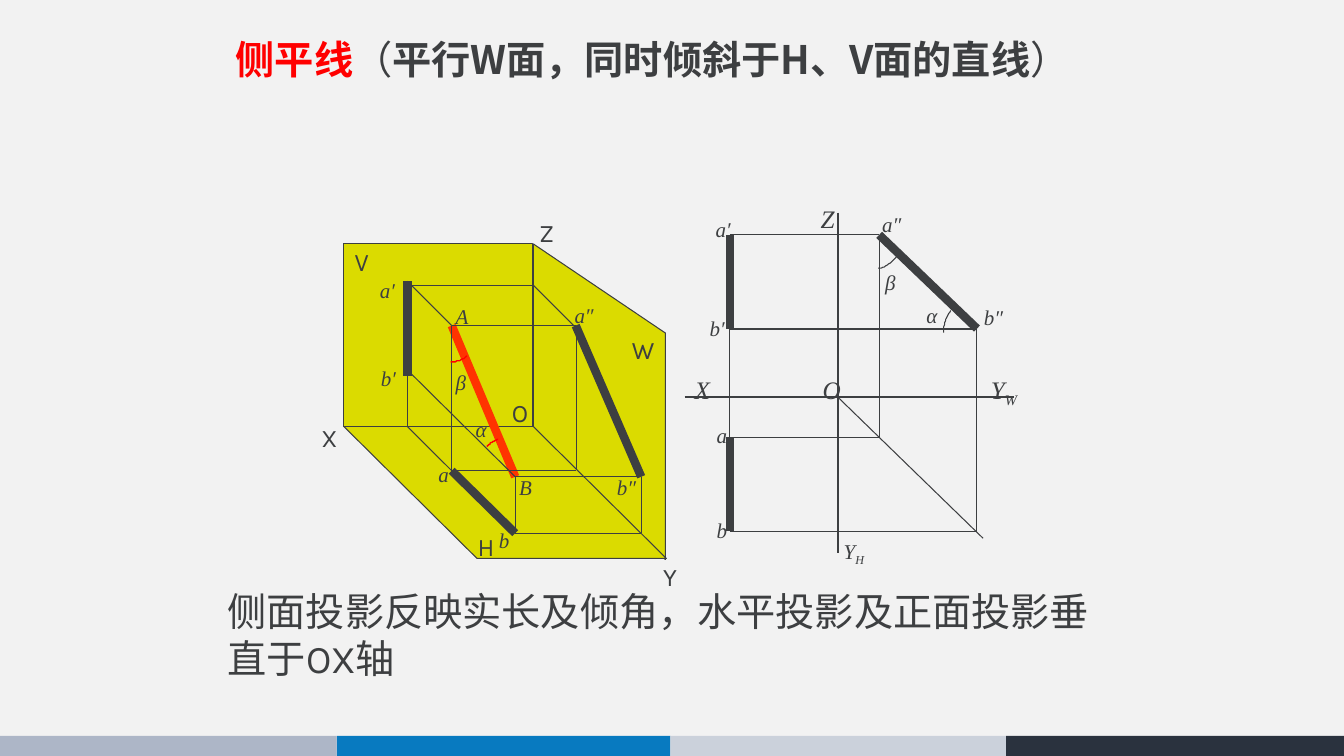
from lxml import etree
from pptx import Presentation
from pptx import util as u
from pptx.dml.color import RGBColor
from pptx.enum import shapes
from pptx.oxml import ns

INK = RGBColor(0x3D, 0x3F, 0x41)
RED = RGBColor(0xFF, 0x00, 0x00)
ORANGE = RGBColor(0xFF, 0x33, 0x00)
YELLOW = RGBColor(0xDB, 0xDB, 0x00)
PAPER = RGBColor(0xF2, 0xF2, 0xF2)
BANDS = [RGBColor(0xAD, 0xB6, 0xC7), RGBColor(0x08, 0x7A, 0xC0),
         RGBColor(0xCB, 0xD1, 0xDB), RGBColor(0x2A, 0x32, 0x3E)]
SANS, SERIF, HAN = "Karla", "Times New Roman", "Noto Sans CJK SC"

# The slide is a grid of 1333 columns by 750 rows
COLUMNS, ROWS = 1333, 750
CELL = u.Inches(0.01)
THIN, MEDIUM, THICK = 0.75, 1.5, 6

presentation = Presentation()
presentation.slide_width = COLUMNS * CELL
presentation.slide_height = ROWS * CELL
slide = presentation.slides.add_slide(presentation.slide_layouts[6])
slide.background.fill.solid()
slide.background.fill.fore_color.rgb = PAPER


def add_text(text, left, top, width=60, height=40, font=SANS, size=18,
             italic=False, color=INK):
    """Place text, given as a string or as (words, format) runs."""
    box = slide.shapes.add_textbox(left * CELL, top * CELL, width * CELL, height * CELL)
    box.text_frame.word_wrap = True
    paragraph = box.text_frame.paragraphs[0]
    for words, style in [(text, {})] if isinstance(text, str) else text:
        run = paragraph.add_run()
        run.text = words
        run.font.size = u.Pt(size)
        run.font.italic = italic
        run.font.bold = style.get("bold", False)
        run.font.color.rgb = style.get("color", color)
        run.font.name = style.get("font", font)
        properties = run._r.get_or_add_rPr()
        east_asian = etree.SubElement(properties, ns.qn("a:ea"))
        east_asian.set("typeface", run.font.name)
        if style.get("subscript"):
            properties.set("baseline", "-25000")


def add_line(x1, y1, x2, y2, weight=THIN, color=INK):
    line = slide.shapes.add_connector(
        shapes.MSO_CONNECTOR.STRAIGHT, x1 * CELL, y1 * CELL, x2 * CELL, y2 * CELL)
    line.line.width = u.Pt(weight)
    line.line.color.rgb = color
    etree.SubElement(line._element.spPr, ns.qn("a:effectLst"))


# Footer bands and the three projection planes
RECTANGLE = shapes.MSO_SHAPE.RECTANGLE
SLANTED = shapes.MSO_SHAPE.PARALLELOGRAM
band_edges = [0, 334, 665, 998, COLUMNS]
blocks = [(RECTANGLE, left, 730, right - left, 20, 0, None, color, False)
          for left, right, color in zip(band_edges, band_edges[1:], BANDS)]
blocks += [
    (SLANTED, 438, 333, 313, 131, 270, 0.675, YELLOW, False),
    (SLANTED, 341, 423, 320, 131, 0, 1.009, YELLOW, True),
    (RECTANGLE, 341, 242, 187, 181, 0, None, YELLOW, False),
]
for kind, left, top, width, height, rotation, slant, color, mirrored in blocks:
    shape = slide.shapes.add_shape(
        kind, left * CELL, top * CELL, width * CELL, height * CELL)
    shape.shadow.inherit = False
    shape.rotation = rotation
    shape.fill.solid()
    shape.fill.fore_color.rgb = color
    if slant:
        shape.adjustments[0] = slant
    if mirrored:
        shape._element.spPr.xfrm.set("flipH", "1")
    if color == YELLOW:
        shape.line.color.rgb = INK
        shape.line.width = u.Pt(THIN)
    else:
        shape.line.fill.background()

# Spatial view: line AB and its three projections
A, B = (448, 323), (511, 473)
a_h, b_h = (448, 467), (511, 529)
a_v, b_v = (404, 279), (404, 373)
a_w, b_w = (571, 323), (636, 473)
foot, corner = (404, 423), (636, 529)
z_point, z_foot = (529, 283), (573, 327)
add_line(*A, *B, THICK, ORANGE)
for start, end in [(a_w, b_w), (b_h, a_h), (a_v, b_v)]:
    add_line(*start, *end, THICK)
for start, end in [
        (a_w, A), (b_w, corner), (corner, b_h), ((571, 467), a_h), (b_v, foot),
        (b_w, B), (B, (404, 367)), (A, a_h), ((572, 323), (572, 466)),
        (z_point, (404, 283)), (z_point, z_foot), (foot, a_h), (B, b_h), (a_v, A)]:
    add_line(*start, *end)

# Unfolded view: columns and rows shared by the projections
left, axis, a_side, b_side = 724, 831, 872, 969
a_top, b_top, horizon, a_low, b_low = 233, 326, 394, 434, 527
for ends in [
        (left, a_low, left, b_top), (axis, horizon, 975, 534),
        (b_side, b_low, b_side, b_top), (a_side, a_top, a_side, a_low),
        (left, b_low, b_side, b_low), (left, a_low, a_side, a_low),
        (left, a_top, a_side, a_top)]:
    add_line(*ends)
for ends in [(679, horizon, 1006, horizon), (axis, 211, axis, 549),
             (left, b_top, b_side, b_top)]:
    add_line(*ends, MEDIUM)
for ends in [(a_side, a_top, b_side, b_top), (left, a_top, left, b_top),
             (left, a_low, left, b_low)]:
    add_line(*ends, THICK)

# Angle marks: start, bend and end of each curve
STEPS = 12
for start, bend, end, color, weight in [
        ((447, 359), (457, 359), (463, 353), RED, 1),
        ((483, 443), (488, 438), (494, 436), RED, 1),
        ((889, 255), (880, 266), (871, 266), INK, THIN),
        ((943, 308), (936, 318), (936, 330), INK, THIN)]:
    points = []
    for step in range(STEPS + 1):
        t = step / STEPS
        points.append([(1 - t) ** 2 * p + 2 * t * (1 - t) * q + t * t * r
                       for p, q, r in zip(start, bend, end)])
    builder = slide.shapes.build_freeform(*points[0], scale=CELL)
    builder.add_line_segments(points[1:], close=False)
    arc = builder.convert_to_shape()
    arc.shadow.inherit = False
    arc.fill.background()
    arc.line.color.rgb = color
    arc.line.width = u.Pt(weight)

# Labels
for name, x, y in [("V", 342, 239), ("W", 617, 327), ("H", 464, 522), ("X", 309, 414),
                   ("Y", 648, 552), ("Z", 525, 211), ("O", 498, 389)]:
    add_text(name, x, y)
for name, x, y in [
        ("A", 442, 296), ("B", 505, 466), ("α", 462, 408), ("β", 442, 362),
        ("a", 425, 453), ("a′", 367, 270), ("b′", 368, 358), ("a″", 560, 295),
        ("b″", 602, 466), ("b", 485, 518), ("b″", 966, 297), ("a′", 700, 210),
        ("b′", 694, 308), ("b", 701, 508), ("a", 701, 414), ("a″", 865, 205),
        ("α", 909, 295), ("β", 868, 262), ([("Y", {}), ("H", {"subscript": True})], 827, 529)]:
    add_text(name, x, y, height=35, font=SERIF, size=15, italic=True)
for name, x, y in [("X", 679, 366), ("Z", 804, 197), ("O", 806, 366),
                   ([("Y", {}), ("W", {"subscript": True})], 973, 366)]:
    add_text(name, x, y, font=SERIF, italic=True)

add_text([("侧平线", {"bold": True, "color": RED}), ("（", {}),
          ("平行W面，同时倾斜于H、V面的直线", {"bold": True, "font": HAN}), ("）", {})],
         224, 30, 856, 57, size=28)
add_text("侧面投影反映实长及倾角，水平投影及正面投影垂直于OX轴", 216, 578, 912, 104, size=28)

presentation.save("out.pptx")
